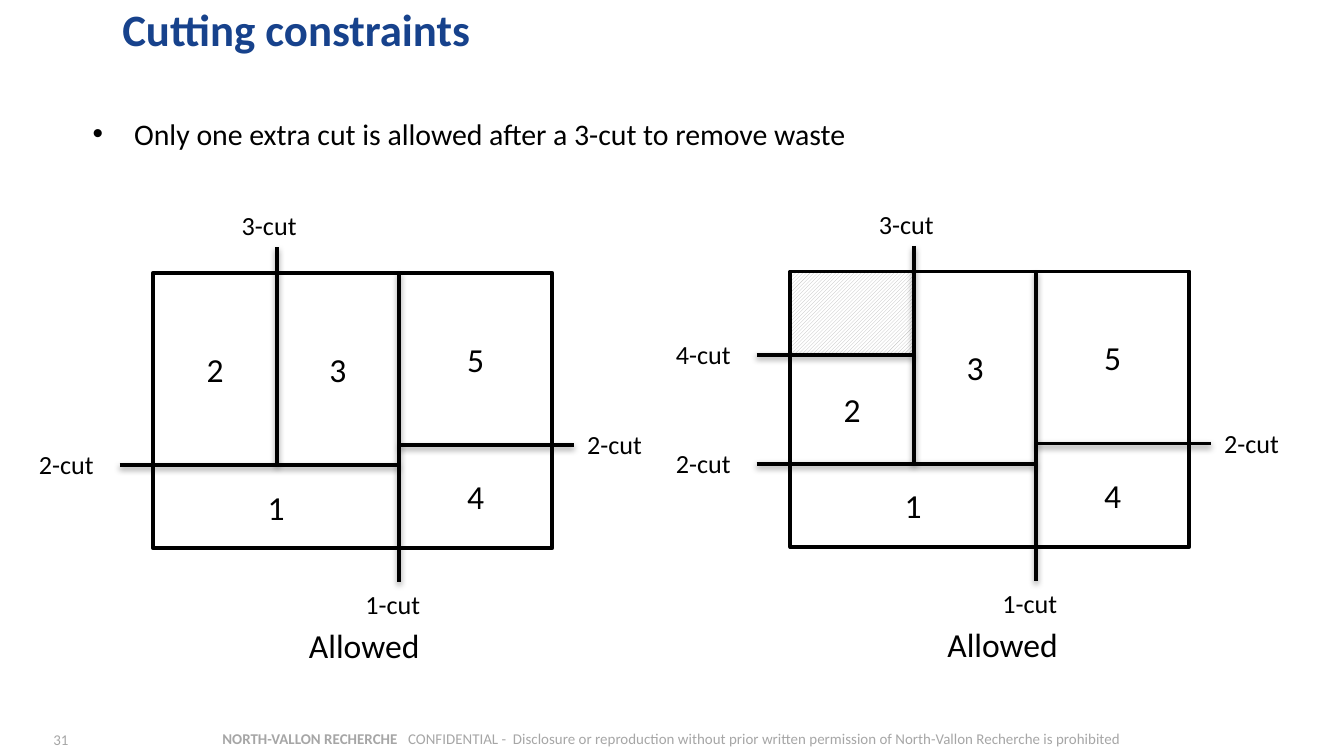
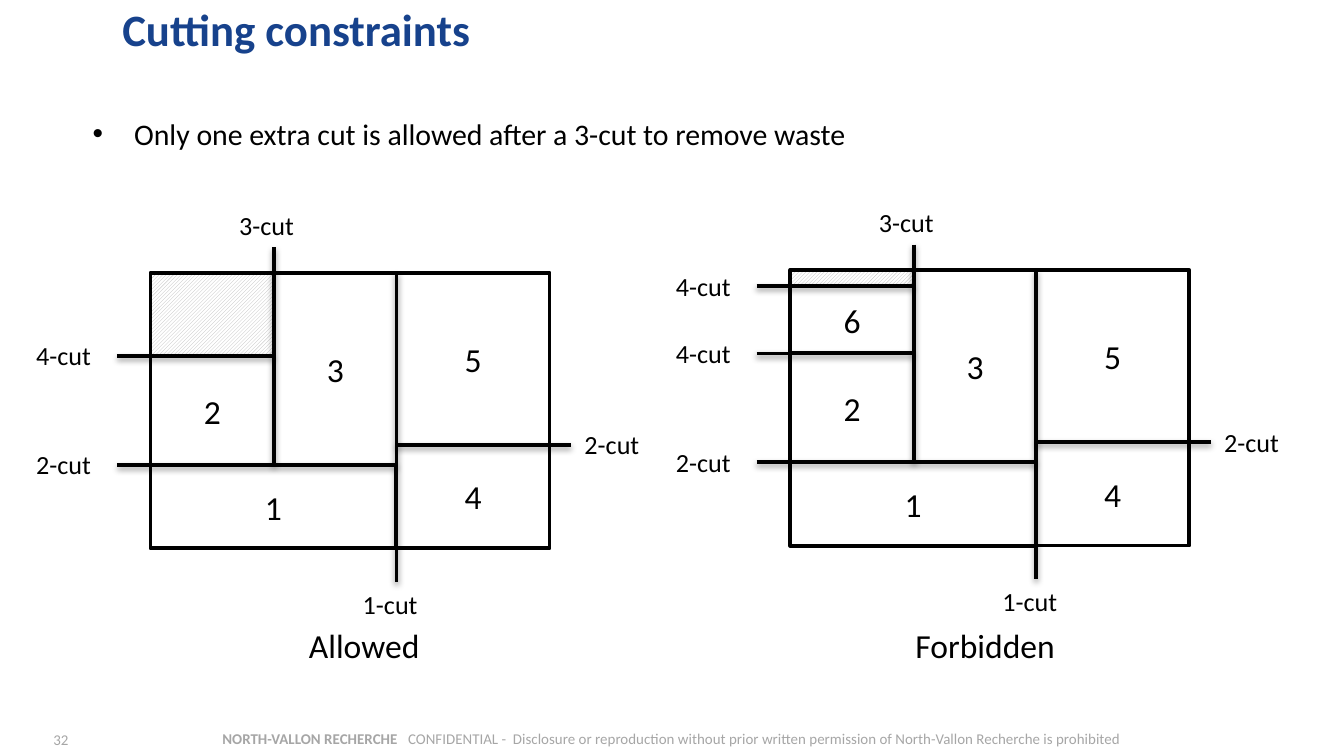
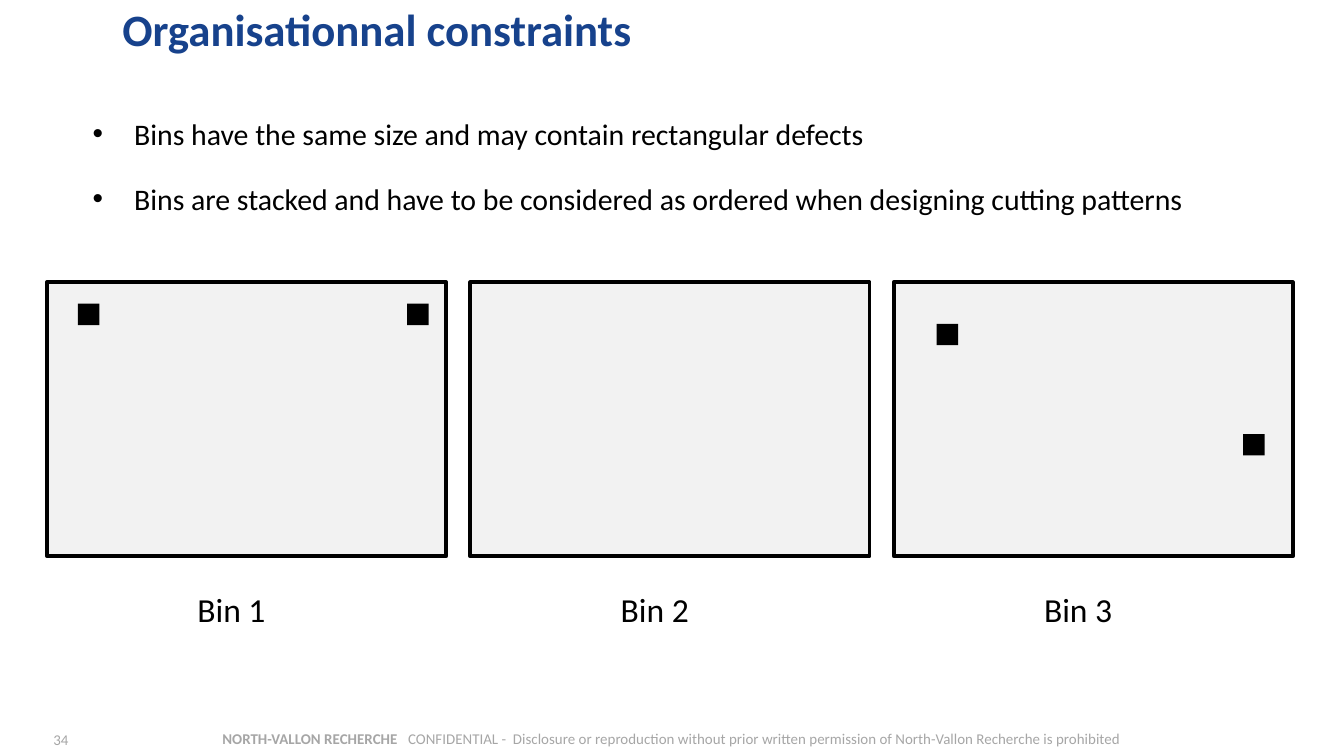
from pptx import Presentation
from pptx.dml.color import RGBColor
from pptx.enum.dml import MSO_PATTERN
from pptx.enum.shapes import MSO_CONNECTOR, MSO_SHAPE
from pptx.enum.text import MSO_ANCHOR, MSO_AUTO_SIZE, PP_ALIGN
from pptx.oxml import parse_xml
from pptx.oxml.ns import nsdecls
from pptx.util import Pt

PX = 9144
FONT = "Calibri"
COLORS = {
    "ink": "000000",
    "title": "17428C",
    "footer": "A6A6A6",
    "white": "FFFFFF",
    "hatch": "BCBCBB",
    "bin": "F2F2F2",
}
COLUMN, LEFT_WIDTH, RIGHT_WIDTH = 92, 183, 114
UPPER_LEFT, UPPER_RIGHT, SHEET_HEIGHT = 143, 128, 205
DEFECT = 16
SHADOW = (
    f'<a:effectLst {nsdecls("a")}>'
    '<a:outerShdw blurRad="40000" dist="20000" dir="5400000" rotWithShape="0">'
    '<a:srgbClr val="000000"><a:alpha val="38000"/></a:srgbClr>'
    "</a:outerShdw></a:effectLst>"
)


def color(name):
    """Return the named colour."""
    return RGBColor.from_string(COLORS[name])


def scale(*lengths):
    """Turn px lengths into EMU."""
    return [length * PX for length in lengths]


def add_run(paragraph, text, size, color_name="ink", bold=False):
    """Add one formatted run to a paragraph."""
    run = paragraph.add_run()
    run.text = text
    run.font.name = FONT
    run.font.size = Pt(size)
    run.font.bold = bold
    run.font.color.rgb = color(color_name)


def set_insets(frame, horizontal, vertical):
    """Set the insets of a text frame."""
    frame.margin_left = frame.margin_right = horizontal * PX
    frame.margin_top = frame.margin_bottom = vertical * PX


def add_text_box(shapes, box):
    """Add a wrapping text box and return its frame."""
    frame = shapes.add_textbox(*scale(*box)).text_frame
    frame.word_wrap = True
    return frame


def add_label(shapes, box, text, size, align=PP_ALIGN.LEFT):
    """Add a one-line label."""
    paragraph = add_text_box(shapes, box).paragraphs[0]
    paragraph.alignment = align
    add_run(paragraph, text, size)


def add_rectangle(shapes, box, fill=None, text="", outlined=True):
    """Add a rectangle with an optional solid fill, outline and number."""
    shape = shapes.add_shape(MSO_SHAPE.RECTANGLE, *scale(*box))
    shape.shadow.inherit = False
    if fill:
        shape.fill.solid()
        shape.fill.fore_color.rgb = color(fill)
    else:
        shape.fill.background()
    if outlined:
        shape.line.color.rgb = color("ink")
        shape.line.width = Pt(2)
    else:
        shape.line.fill.background()
    if text:
        shape.text_frame.vertical_anchor = MSO_ANCHOR.MIDDLE
        paragraph = shape.text_frame.paragraphs[0]
        paragraph.alignment = PP_ALIGN.CENTER
        add_run(paragraph, text, 18)
    return shape


def add_cut(shapes, start, end):
    """Add a cut line with a soft shadow."""
    connector = shapes.add_connector(MSO_CONNECTOR.STRAIGHT, *scale(*start, *end))
    connector.line.color.rgb = color("ink")
    connector.line.width = Pt(2)
    connector._element.spPr.append(parse_xml(SHADOW))


def add_footer(slide, number):
    """Add the slide number and the confidentiality notice."""
    notice = add_text_box(slide.shapes, (64, 538, 872, 24)).paragraphs[0]
    notice.alignment = PP_ALIGN.CENTER
    add_run(notice, "NORTH-VALLON RECHERCHE   ", 8, "footer", bold=True)
    add_run(
        notice,
        "CONFIDENTIAL -  Disclosure or reproduction without prior written "
        "permission of North-Vallon Recherche is prohibited",
        8,
        "footer",
    )
    frame = add_text_box(slide.shapes, (0, 544, 55, 13))
    set_insets(frame, 4, 0)
    frame.vertical_anchor = MSO_ANCHOR.MIDDLE
    frame.paragraphs[0].alignment = PP_ALIGN.RIGHT
    add_run(frame.paragraphs[0], str(number), 8, "footer")


def add_bullets(slide, box, lines):
    """Add the bulleted statements."""
    frame = add_text_box(slide.shapes, box)
    for index, line in enumerate(lines):
        paragraph = frame.add_paragraph() if index else frame.paragraphs[0]
        properties = paragraph._p.get_or_add_pPr()
        properties.set("marL", str(31 * PX))
        properties.set("indent", str(-31 * PX))
        properties.append(parse_xml(f'<a:buFont {nsdecls("a")} typeface="Arial"/>'))
        properties.append(parse_xml(f'<a:buChar {nsdecls("a")} char="•"/>'))
        paragraph.line_spacing = 0.9
        if index:
            paragraph.space_before = Pt(17.5)
        add_run(paragraph, line, 16)


def add_content_slide(presentation, title, number, bullets):
    """Add a slide with its title, bullets and footer."""
    slide = presentation.slides.add_slide(presentation.slide_layouts[5])
    placeholder = slide.shapes.title
    placeholder.left, placeholder.top, placeholder.width, placeholder.height = scale(
        81, 1, 894, 40
    )
    frame = placeholder.text_frame
    frame.auto_size = MSO_AUTO_SIZE.NONE
    frame.vertical_anchor = MSO_ANCHOR.TOP
    set_insets(frame, 10, 0)
    frame.paragraphs[0].alignment = PP_ALIGN.LEFT
    add_run(frame.paragraphs[0], title, 24, "title", bold=True)
    add_bullets(slide, (59, 84, 882, 417), bullets)
    add_footer(slide, number)
    return slide


def add_cut_diagram(slide, left, top, waste_cuts=(), stack=("2",)):
    """Draw a cut sheet whose first column is split by the 4-cuts."""
    shapes = slide.shapes.add_group_shape().shapes
    middle = left + COLUMN
    right = left + LEFT_WIDTH
    left_cut, right_cut = top + UPPER_LEFT, top + UPPER_RIGHT
    fill = "white" if waste_cuts else None

    if waste_cuts:
        waste = add_rectangle(shapes, (left, top, LEFT_WIDTH, UPPER_LEFT))
        waste.fill.patterned()
        waste.fill.pattern = MSO_PATTERN.DARK_UPWARD_DIAGONAL
        waste.fill.fore_color.rgb = color("hatch")
        waste.fill.back_color.rgb = color("white")

    lower_right = SHEET_HEIGHT - UPPER_RIGHT
    lower_left = SHEET_HEIGHT - UPPER_LEFT
    add_rectangle(shapes, (right, right_cut, RIGHT_WIDTH, lower_right), text="4")
    add_rectangle(shapes, (left, left_cut, LEFT_WIDTH, lower_left), text="1")
    add_rectangle(shapes, (right, top, RIGHT_WIDTH, UPPER_RIGHT), text="5")
    third = (middle, top, LEFT_WIDTH - COLUMN, UPPER_LEFT)
    add_rectangle(shapes, third, fill, "3")
    edges = [*(waste_cuts or (0,)), UPPER_LEFT]
    for text, upper, lower in zip(stack, edges, edges[1:]):
        add_rectangle(shapes, (left, top + upper, COLUMN, lower - upper), fill, text)

    add_cut(shapes, (right, top), (right, top + 230))
    add_cut(shapes, (left - 25, left_cut), (right, left_cut))
    add_cut(shapes, (right, right_cut), (right + 130, right_cut))
    add_cut(shapes, (middle, top - 19), (middle, left_cut))
    labels = [
        ("1-cut", 148, 230),
        ("2-cut", -95, UPPER_LEFT - 17),
        ("3-cut", 56, -52),
        ("2-cut", 313, UPPER_RIGHT - 17),
    ]
    for cut in waste_cuts:
        add_cut(shapes, (left - 25, top + cut), (middle, top + cut))
        labels.append(("4-cut", -95, cut - 17))
    for text, across, down in labels:
        add_label(shapes, (left + across, top + down, 71, 34), text, 14)


def add_bin(slide, box, name, defects):
    """Draw a bin with its defects and name."""
    left, top, width, height = box
    shapes = slide.shapes.add_group_shape().shapes
    add_rectangle(shapes, box, "bin")
    for across, down in defects:
        square = (left + across, top + down, DEFECT, DEFECT)
        add_rectangle(shapes, square, "ink", outlined=False)
    add_label(shapes, (left + 102, top + height + 19, 94, 40), name, 18)


def add_cutting_slide(presentation, number, diagrams):
    """Add a slide that compares captioned cut diagrams."""
    slide = add_content_slide(
        presentation,
        "Cutting constraints",
        number,
        ["Only one extra cut is allowed after a 3-cut to remove waste"],
    )
    for origin, waste_cuts, stack, caption, caption_box in diagrams:
        add_cut_diagram(slide, *origin, waste_cuts, stack)
        add_label(slide.shapes, caption_box, caption, 18, PP_ALIGN.CENTER)


def add_bins_slide(presentation, number):
    """Add the slide with the ordered bins."""
    slide = add_content_slide(
        presentation,
        "Organisationnal constraints",
        number,
        [
            "Bins have the same size and may contain rectangular defects",
            "Bins are stacked and have to be considered as ordered when "
            "designing cutting patterns",
        ],
    )
    bin_defects = [[(23, 16), (268, 16)], [], [(260, 113), (32, 31)]]
    for index, defects in enumerate(bin_defects):
        box = (35 + 315 * index, 210, 297, 204)
        add_bin(slide, box, f"Bin {index + 1}", defects)


def main():
    """Build and save the presentation."""
    presentation = Presentation()
    presentation.slide_width = 1000 * PX
    presentation.slide_height = presentation.slide_width * 9 // 16
    left_caption = (157, 460, 228, 40)
    add_cutting_slide(
        presentation,
        31,
        [
            ((114, 203), (), ("2",), "Allowed", left_caption),
            ((588, 202), (62,), ("2",), "Allowed", (632, 459, 228, 40)),
        ],
    )
    add_cutting_slide(
        presentation,
        32,
        [
            ((112, 203), (62,), ("2",), "Allowed", left_caption),
            ((588, 201), (12, 62), ("6", "2"), "Forbidden", (602, 460, 262, 40)),
        ],
    )
    add_bins_slide(presentation, 34)
    presentation.save("out.pptx")


if __name__ == "__main__":
    main()
